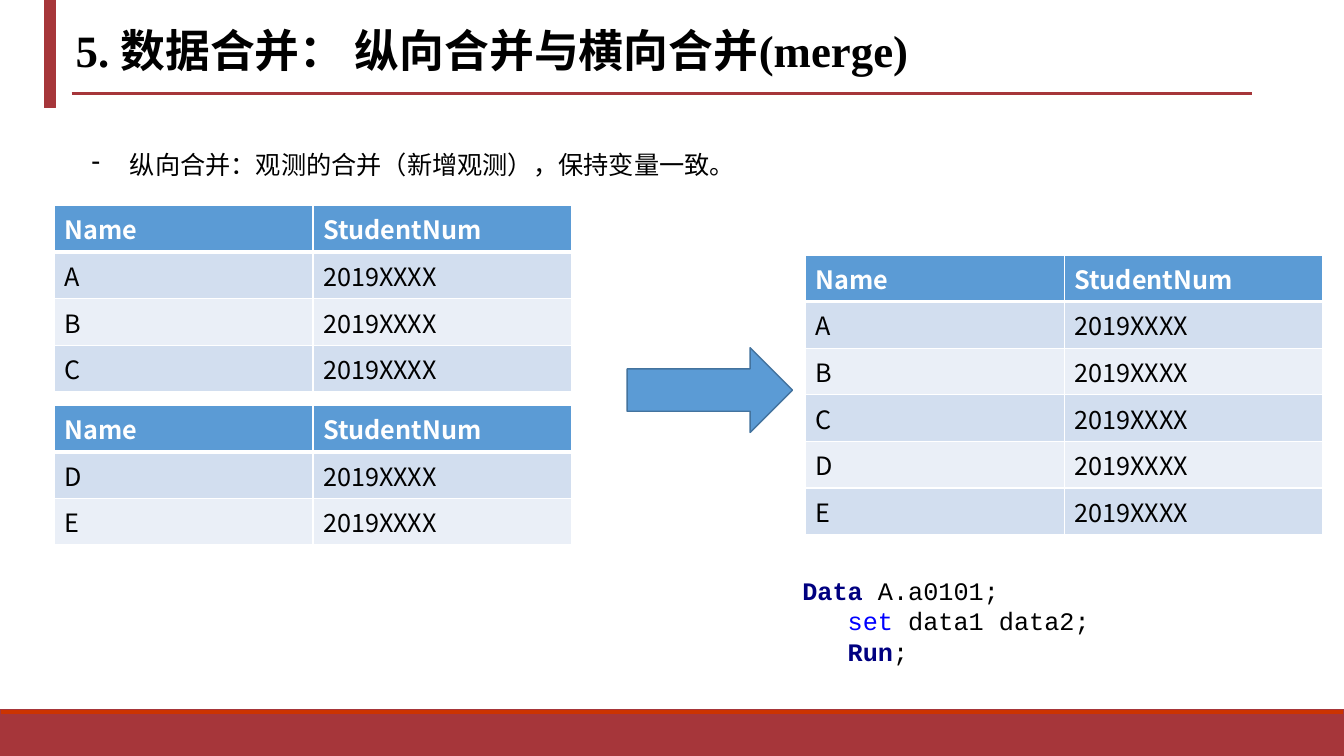
from lxml import etree
from pptx import Presentation
from pptx.dml.color import RGBColor
from pptx.enum.shapes import MSO_CONNECTOR, MSO_SHAPE
from pptx.enum.text import MSO_ANCHOR, MSO_AUTO_SIZE, PP_ALIGN
from pptx.oxml.ns import qn
from pptx.util import Pt

PX = 9144  # 100 px to the inch
RECT, ARROW = MSO_SHAPE.RECTANGLE, MSO_SHAPE.RIGHT_ARROW
LINE = MSO_CONNECTOR.STRAIGHT
LEFT, JUSTIFY = PP_ALIGN.LEFT, PP_ALIGN.JUSTIFY
MIDDLE, FIXED = MSO_ANCHOR.MIDDLE, MSO_AUTO_SIZE.NONE

SANS, SERIF, MONO = "Noto Sans CJK SC", "Times New Roman", "Courier New"
RED, BLUE, BLACK, WHITE = "A6363A", "5B9BD5", "000000", "FFFFFF"
NAVY, KEY = "000080", "0000FF"
BANDS = ("D2DEEF", "EAEFF7")
HEAD = ("Name", "StudentNum")
NUM = "2019XXXX"

# Each line: indent in px, then runs of text, colour and bold
CODE = [
    (0, [("Data", NAVY, True), (" A.a0101;", BLACK, False)]),
    (45, [("set", KEY, False), (" data1 data2;", BLACK, False)]),
    (45, [("Run", NAVY, True), (";", BLACK, False)]),
]


def px(*nums):
    return [n * PX for n in nums]


def rgb(color):
    return RGBColor.from_string(color)


def style(run, font, color=BLACK, bold=False, size=18):
    run.font.size = Pt(size)
    run.font.bold = bold
    run.font.color.rgb = rgb(color)
    run.font.name = font
    east = etree.SubElement(run.font._element, qn("a:ea"))
    east.set("typeface", SANS)


def indent(para, left, first=0):
    props = para._p.get_or_add_pPr()
    props.set("marL", str(left * PX))
    props.set("indent", str(first * PX))
    return props


def add_shape(slide, kind, box, fill, line):
    shape = slide.shapes.add_shape(kind, *px(*box))
    shape.shadow.inherit = False
    shape.fill.solid()
    shape.fill.fore_color.rgb = rgb(fill)
    shape.line.color.rgb = rgb(line)
    shape.line.width = Pt(1)


def add_rule(slide, ends):
    rule = slide.shapes.add_connector(LINE, *px(*ends))
    rule.line.color.rgb = rgb(RED)
    rule.line.width = Pt(2.25)
    etree.SubElement(rule._element.spPr, qn("a:effectLst"))


def add_box(slide, box):
    frame = slide.shapes.add_textbox(*px(*box)).text_frame
    frame.word_wrap = True
    return frame


def set_title(slide, text, box):
    title = slide.shapes.title
    title.left, title.top, title.width, title.height = px(*box)
    frame = title.text_frame
    frame.text = text
    frame.auto_size = FIXED
    frame.vertical_anchor = MIDDLE
    para = frame.paragraphs[0]
    para.alignment = LEFT
    para.line_spacing = 0.9
    style(para.runs[0], SERIF, bold=True, size=32)


def add_point(slide, text, box):
    para = add_box(slide, box).paragraphs[0]
    para.text = text
    para.alignment = JUSTIFY
    style(para.runs[0], SANS)
    props = indent(para, 38, -38)
    etree.SubElement(props, qn("a:buChar")).set("char", "-")


def add_code(slide, lines, box):
    frame = add_box(slide, box)
    for i, (left, parts) in enumerate(lines):
        para = frame.add_paragraph() if i else frame.paragraphs[0]
        indent(para, left)
        for text, color, bold in parts:
            run = para.add_run()
            run.text = text
            style(run, MONO, color, bold)


def set_edges(cell, low):
    """Draw white cell borders; low is the width of the bottom one in points."""
    props = cell._tc.get_or_add_tcPr()
    for side, width in (("L", 1), ("R", 1), ("T", 1), ("B", low)):
        edge = etree.SubElement(props, qn("a:ln" + side))
        edge.set("w", str(Pt(width)))
        fill = etree.SubElement(edge, qn("a:solidFill"))
        etree.SubElement(fill, qn("a:srgbClr")).set("val", WHITE)


def add_names(slide, names, left, top):
    """Add a table that lists one student a row."""
    rows = [HEAD] + [(name, NUM) for name in names]
    box = px(left, top, 513, 41 * len(rows) - 1)
    table = slide.shapes.add_table(len(rows), len(HEAD), *box).table
    for r, row in enumerate(rows):
        top_row = r == 0
        for c, text in enumerate(row):
            cell = table.cell(r, c)
            set_edges(cell, 3 if top_row else 1)
            cell.fill.solid()
            fill = BLUE if top_row else BANDS[(r - 1) % 2]
            cell.fill.fore_color.rgb = rgb(fill)
            cell.text = text
            run = cell.text_frame.paragraphs[0].runs[0]
            style(run, SANS, WHITE if top_row else BLACK, top_row)


def main():
    deck = Presentation()
    deck.slide_width, deck.slide_height = px(1333, 750)
    slide = deck.slides.add_slide(deck.slide_layouts[5])

    add_shape(slide, RECT, (0, 709, 1333, 42), RED, RED)
    add_shape(slide, RECT, (0, 704, 1333, 5), "CC3300", RED)
    add_shape(slide, RECT, (44, 0, 11, 107), RED, RED)
    add_rule(slide, (71, 93, 1242, 93))
    set_title(slide, "5. 数据合并： 纵向合并与横向合并(merge)", (65, -2, 969, 109))

    add_names(slide, "ABC", 54, 204)
    add_names(slide, "DE", 54, 402)
    add_shape(slide, ARROW, (622, 345, 164, 84), BLUE, "43739E")
    add_names(slide, "ABCDE", 799, 253)

    add_point(slide, "纵向合并：观测的合并（新增观测），保持变量一致。", (81, 143, 668, 40))
    add_code(slide, CODE, (786, 566, 453, 101))
    deck.save("out.pptx")


if __name__ == "__main__":
    main()
